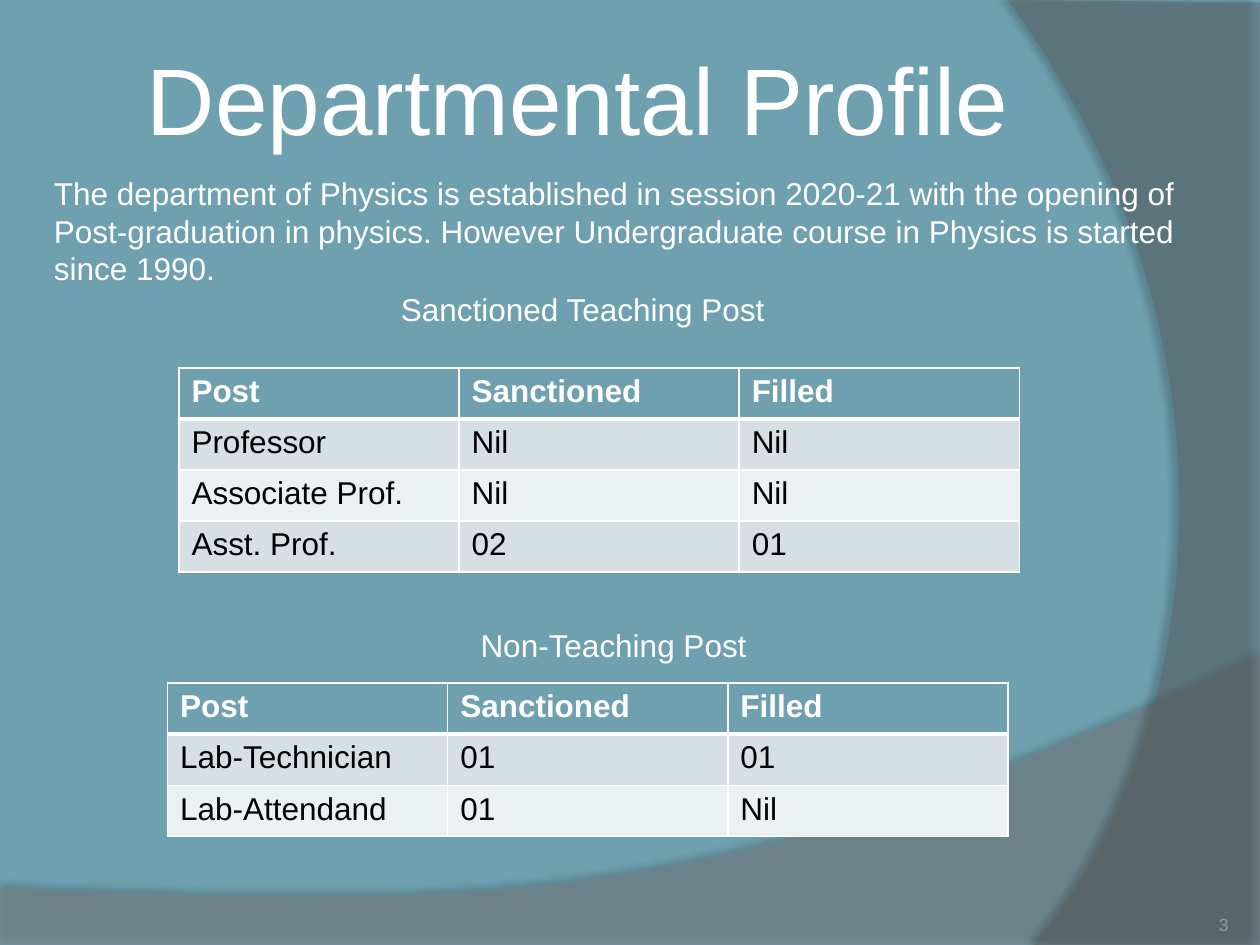
import lxml.etree
import pptx
import pptx.dml.color
import pptx.enum.text
import pptx.oxml
import pptx.oxml.ns
import pptx.util

Inches, Pt = pptx.util.Inches, pptx.util.Pt
RGB = pptx.dml.color.RGBColor.from_string
ALIGN, ANCHOR = pptx.enum.text.PP_ALIGN, pptx.enum.text.MSO_ANCHOR
qn = pptx.oxml.ns.qn

THEME = {
    "font": "Arial",
    "teal": "6EA0B0", "white": "FFFFFF", "black": "000000", "number": "9D9B9A",
    "bands": ["D5DFE4", "EBF0F2"],
    "title": 54, "body": 18, "small": 10,
}


def style_text(frame, text, size, color, align=ALIGN.LEFT, bold=False):
    paragraph = frame.paragraphs[0]
    paragraph.alignment = align
    run = paragraph.add_run()
    run.text = text
    font_format = {"name": THEME["font"], "size": Pt(size), "bold": bold}
    for attribute, value in font_format.items():
        setattr(run.font, attribute, value)
    run.font.color.rgb = RGB(THEME[color])


def curve(start, control_1, control_2, end, steps=60):
    points = []
    for step in range(1, steps + 1):
        t = step / steps
        weights = ((1 - t) ** 3, 3 * t * (1 - t) ** 2, 3 * t * t * (1 - t), t ** 3)
        anchors = (start, control_1, control_2, end)
        points.append(tuple(sum(w * p[axis] for w, p in zip(weights, anchors))
                            for axis in (0, 1)))
    return points


deck = pptx.Presentation()
deck.slide_width, deck.slide_height = Inches(10), Inches(7.5)
profile = deck.slides.add_slide(deck.slide_layouts[6])
profile.background.fill.solid()
profile.background.fill.fore_color.rgb = RGB(THEME["teal"])

# Translucent waves: points, fill, fill opacity %, shadow opacity %,
# shadow blur and distance (points), shadow direction (degrees)
bottom_wave = [(0, 7.05), (0, 7.51), (10, 7.51), (10, 5.2)]
bottom_wave += curve((10, 5.2), (5.59, 7.29), (3.91, 7.19), (0, 7.05))
right_wave = [(10, 0.02), (10, 7.5), (8.21, 7.5)]
right_wave += curve((8.21, 7.5), (9.35, 6.19), (10.18, 3), (8, 0))
waves = [
    (bottom_wave, "7F7F7F", 45, 35, 4, 3.5, 270),
    (right_wave, "5E5E5E", 40, 45, 4, 4, 180),
]
for points, fill, opacity, shade, blur, distance, direction in waves:
    outline = [(Inches(x), Inches(y)) for x, y in points]
    builder = profile.shapes.build_freeform(*outline[0])
    builder.add_line_segments(outline[1:], close=True)
    wave = builder.convert_to_shape()
    wave.fill.solid()
    wave.fill.fore_color.rgb = RGB(fill)
    wave.line.fill.background()
    wave.shadow.inherit = False
    fill_color = wave._element.spPr.find(qn("a:solidFill"))[0]
    lxml.etree.SubElement(fill_color, qn("a:alpha"), val=str(opacity * 1000))
    shadow = lxml.etree.SubElement(
        wave._element.spPr.find(qn("a:effectLst")), qn("a:outerShdw"),
        blurRad=str(Pt(blur)), dist=str(Pt(distance)),
        dir=str(direction * 60000), algn="ctr", rotWithShape="0")
    shadow_color = lxml.etree.SubElement(shadow, qn("a:srgbClr"), val=THEME["black"])
    lxml.etree.SubElement(shadow_color, qn("a:alpha"), val=str(shade * 1000))

# Title, introduction, table captions and page number:
# text, box, size, colour, alignment, anchor, side and top insets
introduction = ("The department of Physics is established in session 2020-21 with the "
                "opening of Post-graduation in physics. However Undergraduate course "
                "in Physics is started since 1990.")
texts = [
    ("Departmental Profile", (0.5, 0.3, 8.17, 0.95), "title", "white",
     ALIGN.CENTER, ANCHOR.MIDDLE, 0.05, 0.05),
    ("3", (8.92, 7.02, 0.83, 0.4), "small", "number",
     ALIGN.RIGHT, ANCHOR.BOTTOM, 0, 0),
    (introduction, (0.33, 1.33, 9.42, 1.01), "body", "white",
     ALIGN.LEFT, ANCHOR.TOP, 0.1, 0.05),
    ("Sanctioned Teaching Post", (2.75, 2.25, 3.75, 0.4), "body", "white",
     ALIGN.CENTER, ANCHOR.TOP, 0.1, 0.05),
    ("Non-Teaching Post", (2.83, 4.92, 4.08, 0.4), "body", "white",
     ALIGN.CENTER, ANCHOR.TOP, 0.1, 0.05),
]
for text, box, size, color, align, anchor, side, top in texts:
    frame = profile.shapes.add_textbox(*map(Inches, box)).text_frame
    frame_format = {
        "word_wrap": True, "vertical_anchor": anchor,
        "margin_left": Inches(side), "margin_right": Inches(side),
        "margin_top": Inches(top), "margin_bottom": Inches(top),
    }
    for attribute, value in frame_format.items():
        setattr(frame, attribute, value)
    style_text(frame, text, THEME[size], color, align)

# Post tables
header = ("Post", "Sanctioned", "Filled")
post_tables = [
    ((1.42, 2.92, 6.67, 1.62), [
        header,
        ("Professor", "Nil", "Nil"),
        ("Associate Prof.", "Nil", "Nil"),
        ("Asst. Prof.", "02", "01"),
    ]),
    ((1.33, 5.42, 6.67, 1.22), [
        header,
        ("Lab-Technician", "01", "01"),
        ("Lab-Attendand", "01", "Nil"),
    ]),
]
for box, rows in post_tables:
    posts = profile.shapes.add_table(len(rows), len(header), *map(Inches, box)).table
    for r, row in enumerate(rows):
        is_header = r == 0
        for c, text in enumerate(row):
            cell = posts.cell(r, c)
            style_text(cell.text_frame, text, THEME["body"],
                       "white" if is_header else "black", bold=is_header)
            # Borders come before the fill in the cell properties
            properties = cell._tc.get_or_add_tcPr()
            for side in ("lnL", "lnR", "lnT", "lnB"):
                heavy = (is_header and side == "lnB") or (r == 1 and side == "lnT")
                border = lxml.etree.SubElement(properties, qn("a:" + side),
                                               w=str(Pt(3 if heavy else 1)))
                paint = lxml.etree.SubElement(border, qn("a:solidFill"))
                lxml.etree.SubElement(paint, qn("a:srgbClr"), val=THEME["white"])
            cell.fill.solid()
            cell.fill.fore_color.rgb = RGB(
                THEME["teal"] if is_header else THEME["bands"][(r - 1) % 2])

deck.save("out.pptx")
